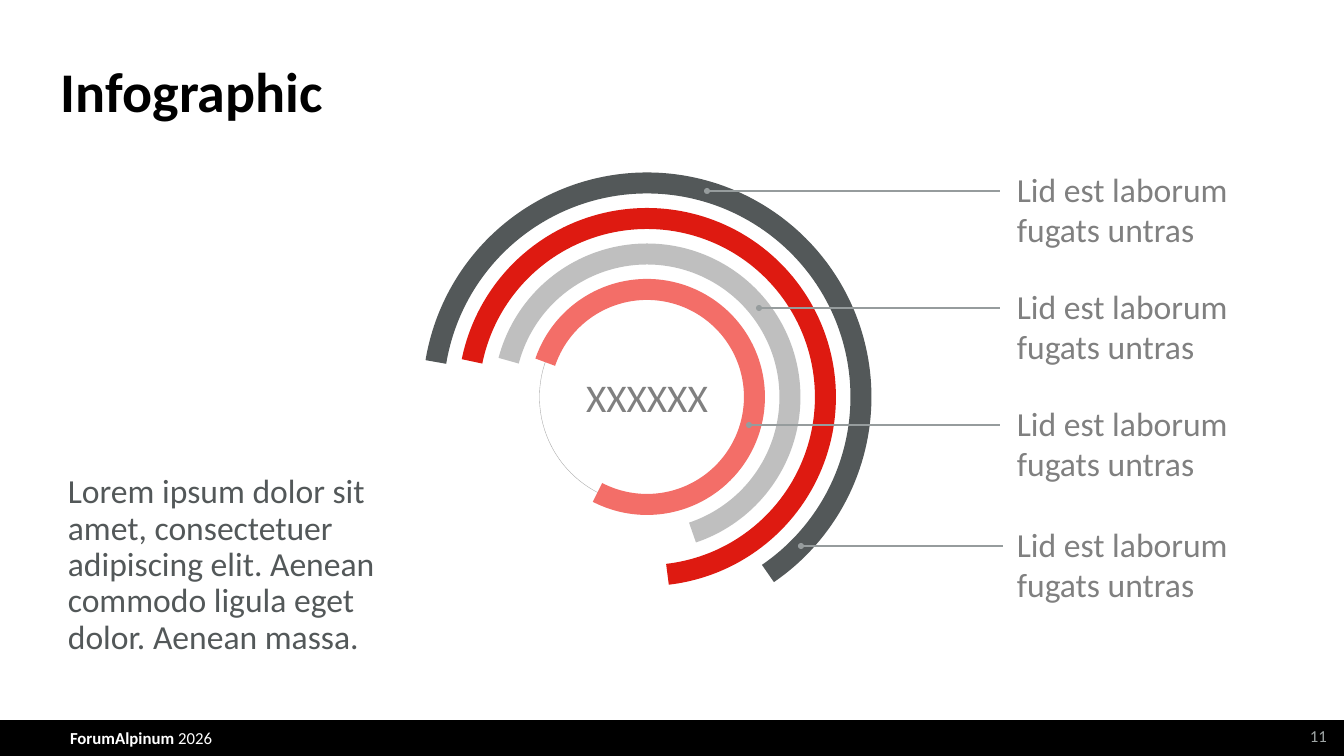
from pptx import Presentation
from pptx.dml.color import RGBColor
from pptx.enum.shapes import MSO_CONNECTOR, MSO_SHAPE
from pptx.enum.text import MSO_ANCHOR, PP_ALIGN
from pptx.oxml.ns import qn
from pptx.util import Pt
from lxml import etree

RECT, OVAL, ARC = MSO_SHAPE.RECTANGLE, MSO_SHAPE.OVAL, MSO_SHAPE.ARC
LINE = MSO_CONNECTOR.STRAIGHT
TOP, MID = MSO_ANCHOR.TOP, MSO_ANCHOR.MIDDLE
LEFT, MIDDLE, RIGHT = PP_ALIGN.LEFT, PP_ALIGN.CENTER, PP_ALIGN.RIGHT
FONT = "Calibri"
PX = 914400 / 100.8

# Content
TITLE = "Infographic"
BODY = ("Lorem ipsum dolor sit amet, consectetuer adipiscing elit. "
        "Aenean commodo ligula eget dolor. Aenean massa.")
HUB = "XXXXXX"
FOOT = ["ForumAlpinum", " 2026"]
PAGE = "11"
LABEL = "Lid est laborum\nfugats untras"
# Colour, start and end angle in degrees, outermost ring first
RINGS = [
    ("535859", 189.41, 55.58),
    ("DE1A11", 191.5, 83.4),
    ("BFBFBF", 194.7, 71.43),
    ("F36E68", 198.87, 117.41),
]
# Dot centre x, y and the right end of each leader
LEADS = [(707, 191, 1000), (759, 308, 1000), (749, 425, 1000), (801, 546, 1003)]

# Ring layout
MID_X, MID_Y = 647, 397
OUTER, STEP = 428, 71
INNER = OUTER - STEP * (len(RINGS) - 1)
DOT = 6


def px(n):
    return round(n * PX)


def rgb(code):
    return RGBColor.from_string(code)


def style(frame, size, color, bold=False, align=LEFT, anchor=TOP,
          space=None, inset=None):
    frame.word_wrap = True
    frame.vertical_anchor = anchor
    if inset is not None:
        frame.margin_left = frame.margin_right = px(inset)
        frame.margin_top = frame.margin_bottom = px(inset)
    for para in frame.paragraphs:
        para.alignment = align
        if space:
            para.line_spacing = space
        for run in para.runs:
            run.font.name = FONT
            run.font.size = Pt(size)
            run.font.bold = bold
            run.font.color.rgb = rgb(color)


def text(box, words, size, color, **look):
    frame = slide.shapes.add_textbox(*map(px, box)).text_frame
    frame.text = words
    style(frame, size, color, **look)
    return frame


def shape(kind, box, fill=None, line=None, width=1):
    item = slide.shapes.add_shape(kind, *map(px, box))
    item.shadow.inherit = False
    if fill:
        item.fill.solid()
        item.fill.fore_color.rgb = rgb(fill)
    else:
        item.fill.background()
    if line:
        item.line.color.rgb = rgb(line)
        item.line.width = Pt(width)
    else:
        item.line.fill.background()
    return item


def round_box(x, y, size):
    return x - size / 2, y - size / 2, size, size


deck = Presentation()
deck.slide_width, deck.slide_height = px(1344), px(756)
slide = deck.slides.add_slide(deck.slide_layouts[6])

# Footer bar
shape(RECT, (0, 720, 1344, 36), "000000")
text((1255, 723, 72, 28), PAGE, 12, "9FA6A6", align=RIGHT, anchor=MID,
     space=0.9, inset=0)
foot = text((70, 720, 153, 36), "", 12, "FFFFFF", inset=0)
for part in FOOT:
    foot.paragraphs[0].add_run().text = part
style(foot, 12, "FFFFFF", anchor=MID, inset=0)
foot.paragraphs[0].runs[0].font.bold = True

# Title
text((51, 54, 1241, 68), TITLE, 40, "000000", bold=True, space=0.9, inset=10)

# Hub and rings
hub = shape(OVAL, round_box(MID_X, MID_Y, INNER), "FFFFFF", "A6A6A6", 0.25)
hub.text_frame.text = HUB
style(hub.text_frame, 28, "808080", align=MIDDLE, anchor=MID)
for i, (color, start, end) in enumerate(RINGS):
    ring = shape(ARC, round_box(MID_X, MID_Y, OUTER - STEP * i), None, color, 15)
    # Adjustments count 60000ths of a degree, divided by 100000
    ring.adjustments[0] = start * 0.6
    ring.adjustments[1] = end * 0.6

# Labels with leaders
for x, y, end in LEADS:
    text((1007, y - 27, 337, 92), LABEL, 24, "808080")
    lead = slide.shapes.add_connector(LINE, px(x), px(y), px(end), px(y))
    lead.line.color.rgb = rgb("969C9D")
    lead.line.width = Pt(1)
    etree.SubElement(lead._element.spPr, qn("a:effectLst"))
    shape(OVAL, round_box(x, y, DOT), "969C9D")

# Body text
text((58, 470, 339, 192), BODY, 24, "535859", space=0.9)

deck.save("out.pptx")
